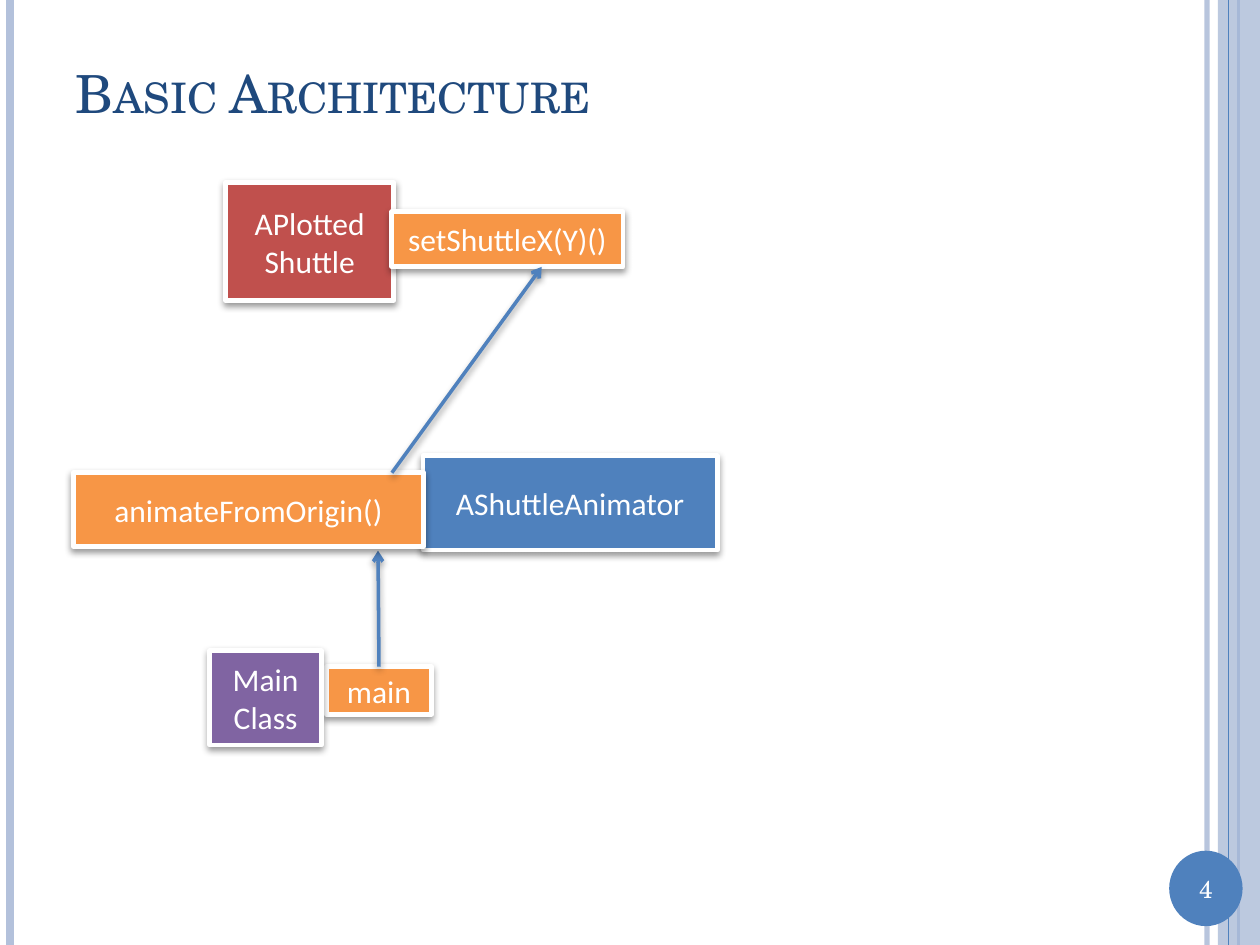
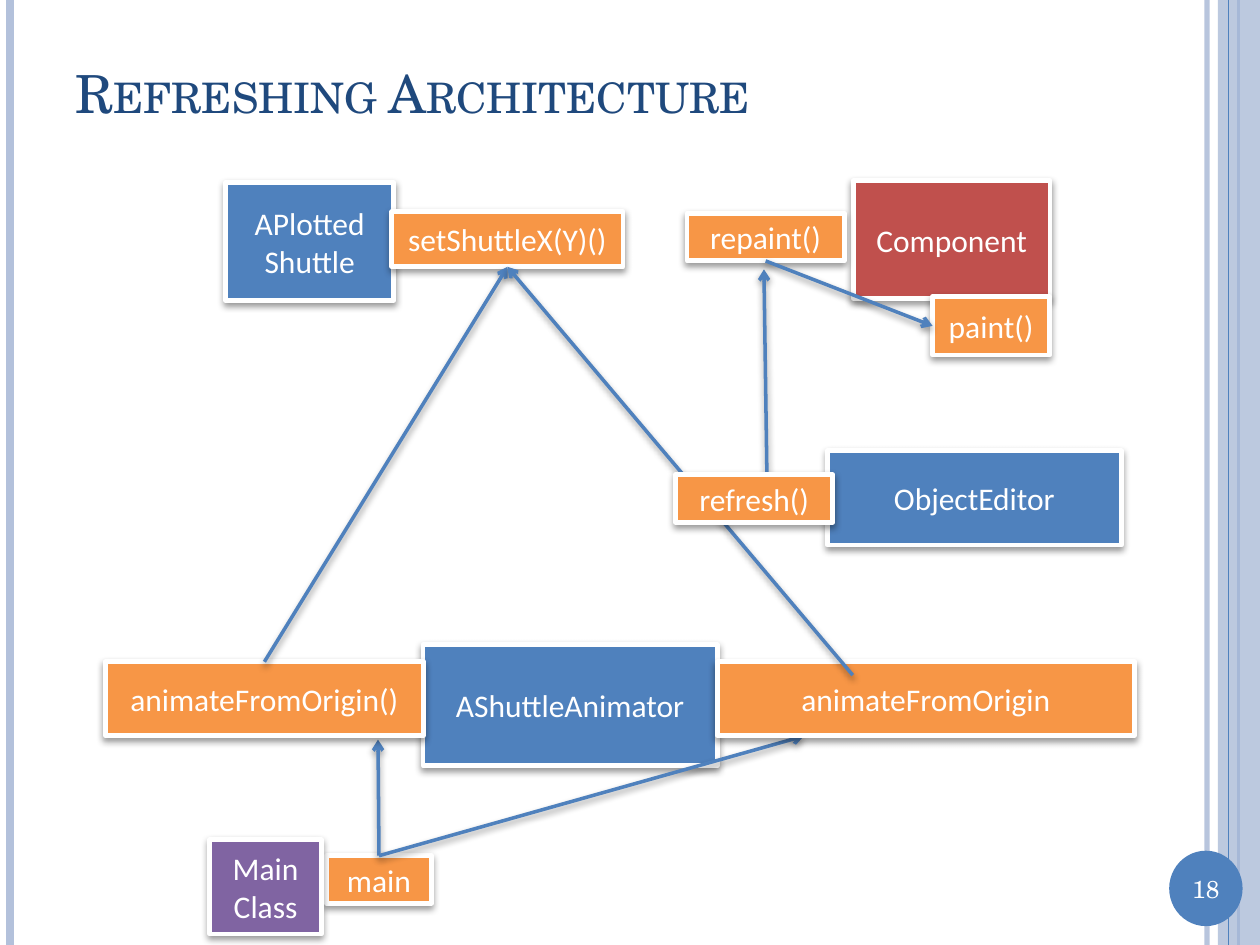
from lxml.etree import SubElement
from pptx import Presentation
from pptx.dml.color import RGBColor
from pptx.enum.shapes import MSO_CONNECTOR as Link, MSO_SHAPE as Form
from pptx.enum.text import MSO_ANCHOR as Anchor, PP_ALIGN as Align
from pptx.oxml.ns import qn
from pptx.util import Cm, Pt

WHITE, NAVY, PALE = "FFFFFF", "1F497D", "B3C1DB"
BLUE, RED, ORANGE, PURPLE = "4F81BD", "C0504D", "F79646", "8064A2"
SERIF, SANS = "TeX Gyre Schola", "Calibri"


def rgb(code):
    """Turn a hex string into a colour."""
    return RGBColor.from_string(code)


def fade(node, share):
    """Set the opacity, in percent, of the colour inside a node."""
    color = next(node.iter(qn("a:srgbClr")))
    SubElement(color, qn("a:alpha"), val=str(share * 1000))


def shade(item, soft):
    """Give an item a soft shadow, or none at all."""
    props = item._element.spPr
    effect = props.find(qn("a:effectLst"))
    if effect is None:
        effect = SubElement(props, qn("a:effectLst"))
    if soft:
        drop = SubElement(effect, qn("a:outerShdw"), blurRad=str(Pt(4)),
                          dist=str(Pt(2)), dir="5400000", rotWithShape="0")
        SubElement(drop, qn("a:srgbClr"), val="000000")
        fade(drop, 40)


class Deck:
    """Hold the style and the current slide."""

    def __init__(self):
        """Start an empty deck."""
        self.show = Presentation()
        self.show.slide_width, self.show.slide_height = Cm(25.4), Cm(19.05)
        self.slide = None

    def page(self, title, number):
        """Add a slide with its bands, number and title."""
        self.slide = self.show.slides.add_slide(self.show.slide_layouts[5])
        self.rule(24.33, PALE, 3, 93)
        self.rule(0.21, PALE, 4.5)
        self.rule(24.97, BLUE, 1.5)
        band = self.shape(Form.RECTANGLE, 24.55, 0, 0.85, 19.05, PALE)
        fade(band._element.spPr, 87)
        self.rule(24.77, BLUE, 0.75)
        disc = self.shape(Form.OVAL, 23.57, 17.15, 1.48, 1.52, BLUE)
        self.label(disc, str(number), SERIF, 14, WHITE, Align.CENTER, 0)
        head = self.slide.shapes.title
        head.left, head.top, head.width, head.height = (
            Cm(1.27), Cm(0.76), Cm(22.02), Cm(2.21))
        self.label(head, title, SERIF, 30, NAVY, Align.LEFT, 0.25)
        para = head.text_frame.paragraphs[0]
        para._p.pPr.find(qn("a:defRPr")).set("cap", "small")

    def label(self, item, text, face, size, color, align, inset):
        """Put styled text in a shape."""
        frame = item.text_frame
        frame.text = text
        frame.word_wrap = True
        frame.vertical_anchor = Anchor.MIDDLE
        frame.margin_left = frame.margin_right = Cm(inset)
        frame.margin_top = frame.margin_bottom = Cm(min(inset, 0.13))
        for para in frame.paragraphs:
            para.alignment = align
            para.font.name, para.font.size = face, Pt(size)
            para.font.color.rgb = rgb(color)

    def shape(self, form, x, y, wide, high, fill):
        """Draw a plain filled shape."""
        item = self.slide.shapes.add_shape(
            form, Cm(x), Cm(y), Cm(wide), Cm(high))
        item.fill.solid()
        item.fill.fore_color.rgb = rgb(fill)
        item.line.fill.background()
        item.shadow.inherit = False
        return item

    def box(self, text, x, y, wide, high, fill=ORANGE):
        """Draw a labelled box with a white edge."""
        item = self.shape(Form.RECTANGLE, x, y, wide, high, fill)
        item.line.color.rgb = rgb(WHITE)
        item.line.width = Pt(2.75)
        shade(item, True)
        self.label(item, text, SANS, 18, WHITE, Align.CENTER, 0.13)
        return item

    def line(self, x1, y1, x2, y2, color, width):
        """Draw a straight line."""
        item = self.slide.shapes.add_connector(
            Link.STRAIGHT, Cm(x1), Cm(y1), Cm(x2), Cm(y2))
        item.line.color.rgb = rgb(color)
        item.line.width = Pt(width)
        return item

    def rule(self, x, color, width, share=100):
        """Draw a line down the full slide."""
        item = self.line(x, 0, x, 19.05, color, width)
        shade(item, False)
        if share < 100:
            fade(item._element.spPr, share)

    def arrow(self, x1, y1, x2, y2, start=None, end=None):
        """Draw an arrow, joined to (box, side) pairs where given."""
        item = self.line(x1, y1, x2, y2, BLUE, 2)
        edge = item._element.spPr.find(qn("a:ln"))
        SubElement(edge, qn("a:tailEnd"), type="arrow")
        shade(item, True)
        if start:
            item.begin_connect(*start)
        if end:
            item.end_connect(*end)

    def core(self, fill, high, top, drop):
        """Draw the classes both designs share; return main and setter."""
        self.box("APlotted\nShuttle", 4.55, 3.68, 3.39, 2.38, fill)
        self.box("AShuttleAnimator", 8.53, top, 5.93, high, BLUE)
        main = self.box("main", 6.58, 13.44 + drop, 2.12, 0.96)
        setter = self.box("setShuttleX(Y)()", 7.9, 4.27, 4.66, 1.11)
        self.arrow(7.62, 13.44 + drop, 7.62, 11.1 + drop, (main, 0))
        self.box("Main Class", 4.23, 13.12 + drop, 2.25, 1.9, PURPLE)
        return main, setter


def basic(deck):
    """Build the basic design."""
    deck.page("Basic Architecture", 4)
    deck.core(RED, 1.9, 9.19, 0)
    deck.box("animateFromOrigin()", 1.48, 9.53, 7.06, 1.49)
    deck.arrow(7.9, 9.53, 10.92, 5.38)


def refresh(deck):
    """Build the refreshing design."""
    deck.page("Refreshing Architecture", 18)
    main, setter = deck.core(BLUE, 2.44, 13, 3.81)
    deck.box("Component", 17.2, 3.64, 3.97, 2.38, RED)
    redraw = deck.box("repaint()", 13.85, 4.3, 3.17, 0.96)
    paint = deck.box("paint()", 18.8, 5.98, 2.36, 1.18)
    origin = deck.box("animateFromOrigin()", 2.12, 13.34, 6.42, 1.49)
    deck.arrow(5.33, 13.34, 10.23, 5.38, (origin, 0), (setter, 2))
    deck.arrow(15.46, 9.57, 15.4, 5.43)
    deck.arrow(7.62, 17.25, 16.2, 14.84, (main, 0))
    deck.box("animateFromOrigin", 14.46, 13.34, 8.41, 1.49)
    deck.box("ObjectEditor", 16.68, 9.09, 5.93, 1.9, BLUE)
    deck.arrow(17.19, 13.61, 10.23, 5.38, end=(setter, 2))
    deck.box("refresh()", 13.62, 9.57, 3.17, 0.96)
    deck.arrow(15.44, 5.26, 18.8, 6.57, (redraw, 2), (paint, 1))


def main():
    """Build and save the deck."""
    deck = Deck()
    basic(deck)
    refresh(deck)
    deck.show.save("out.pptx")


if __name__ == "__main__":
    main()
